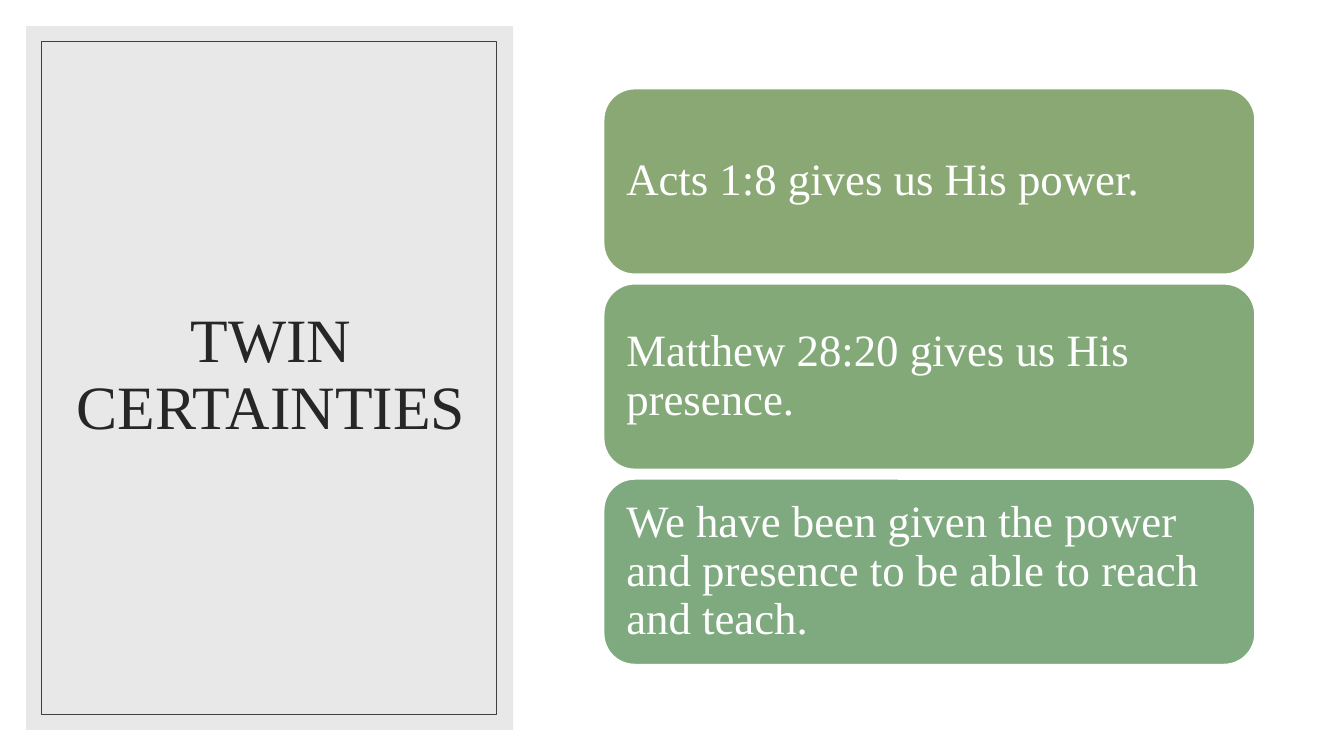
from lxml.etree import SubElement
from pptx import Presentation
from pptx.dml.color import RGBColor
from pptx.enum.shapes import MSO_SHAPE
from pptx.enum.text import MSO_ANCHOR, MSO_AUTO_SIZE, PP_ALIGN
from pptx.oxml.ns import qn
from pptx.util import Pt

TITLE = "TWIN CERTAINTIES"
CARDS = [
    ("Acts 1:8 gives us His power.", "olive"),
    ("Matthew 28:20 gives us His presence.", "green"),
    ("We have been given the power and presence to be able to reach and teach.", "teal"),
]
COLORS = {
    "white": "FFFFFF", "panel": "D9D9D9", "ink": "262626", "frame": "404040",
    "olive": "89A873", "green": "83A979", "teal": "7FAA7F",
}
FONT = "Times New Roman"
WIDE, HIGH = 960, 540
PANEL = (18.7, 18.7, 347.8, 502.6)
FRAME = (29.5, 29.5, 324.7, 481)
HEAD = (45.4, 43.9, 296.6, 449.3)
LEFT, TOP, CARD_W, CARD_H, GAP = 431.3, 63.4, 465.1, 132.4, 7
INSET = 9.6


def color(name):
    return RGBColor.from_string(COLORS[name])


def add_box(slide, kind, box, fill=None, line=None, width=1):
    shape = slide.shapes.add_shape(kind, *map(Pt, box))
    shape.shadow.inherit = False
    if fill:
        shape.fill.solid()
        shape.fill.fore_color.rgb = color(fill)
    else:
        shape.fill.background()
    if line:
        shape.line.color.rgb = color(line)
        shape.line.width = Pt(width)
    else:
        shape.line.fill.background()
    return shape


def set_text(shape, text, size, ink, align):
    frame = shape.text_frame
    frame.text = text
    frame.word_wrap = True
    frame.auto_size = MSO_AUTO_SIZE.NONE
    frame.vertical_anchor = MSO_ANCHOR.MIDDLE
    para = frame.paragraphs[0]
    para.alignment = align
    para.line_spacing = 0.9
    font = para.runs[0].font
    font.name, font.size = FONT, Pt(size)
    font.color.rgb = color(ink)


def main():
    deck = Presentation()
    deck.slide_width, deck.slide_height = Pt(WIDE), Pt(HIGH)
    slide = deck.slides.add_slide(deck.slide_layouts[5])
    add_box(slide, MSO_SHAPE.RECTANGLE, (0, 0, WIDE, HIGH), "white")

    panel = add_box(slide, MSO_SHAPE.RECTANGLE, PANEL, "panel")
    tint = panel._element.spPr.find(qn("a:solidFill"))[0]
    SubElement(tint, qn("a:alpha"), val="60000")

    title = slide.shapes.title
    title.left, title.top, title.width, title.height = map(Pt, HEAD)
    set_text(title, TITLE, 44, "ink", PP_ALIGN.CENTER)
    panel._element.addnext(title._element)  # title sits above the panel
    add_box(slide, MSO_SHAPE.RECTANGLE, FRAME, line="frame", width=0.5)

    for row, (text, fill) in enumerate(CARDS):
        box = (LEFT, TOP + row * (CARD_H + GAP), CARD_W, CARD_H)
        card = add_box(slide, MSO_SHAPE.ROUNDED_RECTANGLE, box, fill, "white")
        set_text(card, text, 32, "white", PP_ALIGN.LEFT)
        frame = card.text_frame
        frame.margin_left = frame.margin_right = Pt(INSET)
        frame.margin_top = frame.margin_bottom = Pt(INSET)

    deck.save("out.pptx")


if __name__ == "__main__":
    main()
